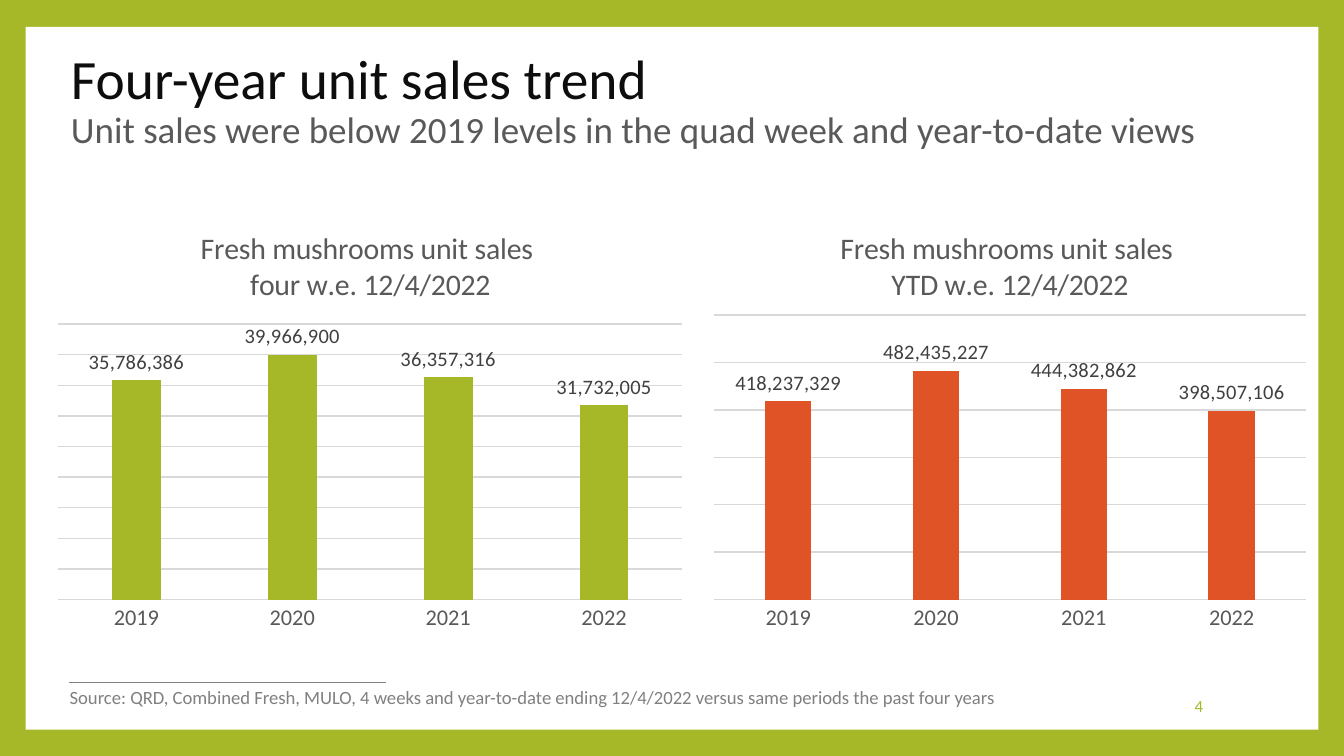
import lxml.etree
import pptx
import pptx.chart.data
import pptx.dml.color
import pptx.enum.chart
import pptx.enum.shapes
import pptx.enum.text
import pptx.oxml
import pptx.oxml.ns
import pptx.util

Inches = pptx.util.Inches
ALIGN = pptx.enum.text.PP_ALIGN
ANCHOR = pptx.enum.text.MSO_ANCHOR
COLORS = {
    "green": "A6B727", "orange": "DF5327", "panel": "FFFFFF", "ink": "0D0D0D",
    "muted": "595959", "label": "404040", "source": "808080", "grid": "D9D9D9",
}


class SlideBuilder:
    """Hold the style and the current slide, and add each kind of element."""

    def __init__(self, slide, colors, font_name):
        self.slide = slide
        self.colors = colors
        self.font_name = font_name

    def color(self, key):
        return pptx.dml.color.RGBColor.from_string(self.colors[key])

    def apply(self, target, formats):
        for attribute, value in formats.items():
            setattr(target, attribute, value)

    def style_font(self, font, size, color):
        self.apply(font, {"name": self.font_name, "size": pptx.util.Pt(size), "bold": False})
        font.color.rgb = self.color(color)

    def style_line(self, line, color, width):
        line.color.rgb = self.color(color)
        line.width = pptx.util.Pt(width)

    def background(self, color):
        fill = self.slide.background.fill
        fill.solid()
        fill.fore_color.rgb = self.color(color)

    def panel(self, box, color):
        panel = self.slide.shapes.add_shape(
            pptx.enum.shapes.MSO_SHAPE.RECTANGLE, *map(Inches, box))
        panel.shadow.inherit = False
        panel.fill.solid()
        panel.fill.fore_color.rgb = self.color(color)
        panel.line.fill.background()

    def rule(self, ends, color, width):
        rule = self.slide.shapes.add_connector(
            pptx.enum.shapes.MSO_CONNECTOR.STRAIGHT, *map(Inches, ends))
        self.style_line(rule.line, color, width)
        properties = rule._element.spPr
        lxml.etree.SubElement(properties, pptx.oxml.ns.qn("a:effectLst"))

    def text(self, box, lines, align=ALIGN.LEFT, spacing=1.0, wrap=True):
        frame = self.slide.shapes.add_textbox(*map(Inches, box)).text_frame
        self.apply(frame, {"word_wrap": wrap, "vertical_anchor": ANCHOR.MIDDLE})
        paragraph = frame.paragraphs[0]
        self.apply(paragraph, {"alignment": align, "line_spacing": spacing})
        for index, (words, size, color) in enumerate(lines):
            if index:
                paragraph.add_line_break()
            run = paragraph.add_run()
            run.text = words
            self.style_font(run.font, size, color)

    def column_chart(self, box, title, years, units, color, axis_top, axis_step, plot_top, plot_height):
        data = pptx.chart.data.CategoryChartData(number_format="#,##0")
        data.categories = years
        data.add_series("Series 1", units)
        chart = self.slide.shapes.add_chart(
            pptx.enum.chart.XL_CHART_TYPE.COLUMN_CLUSTERED, *map(Inches, box), data).chart
        chart.has_legend = False
        self.style_font(chart.font, 10, "muted")
        self.chart_title(chart, title)
        self.axes(chart, axis_top, axis_step)
        self.columns(chart.plots[0], color)
        self.plot_layout(chart, plot_top, plot_height)

    def chart_title(self, chart, title):
        frame = chart.chart_title.text_frame
        frame.text = title
        for paragraph in frame.paragraphs:
            self.style_font(paragraph.runs[0].font, 16, "muted")
        chart.chart_title.include_in_layout = False

    def axes(self, chart, axis_top, axis_step):
        no_mark = pptx.enum.chart.XL_TICK_MARK.NONE
        self.apply(chart.category_axis, {"major_tick_mark": no_mark, "minor_tick_mark": no_mark})
        self.style_font(chart.category_axis.tick_labels.font, 12, "muted")
        self.style_line(chart.category_axis.format.line, "grid", 0.75)
        self.apply(chart.value_axis, {
            "visible": False, "has_major_gridlines": True, "minimum_scale": 0,
            "maximum_scale": axis_top, "major_unit": axis_step})
        self.style_line(chart.value_axis.major_gridlines.format.line, "grid", 0.75)

    def columns(self, plot, color):
        self.apply(plot, {"gap_width": 219, "overlap": -27, "vary_by_categories": False})
        series = plot.series[0]
        self.apply(series.data_labels, {
            "show_value": True, "number_format": "#,##0", "number_format_is_linked": False,
            "position": pptx.enum.chart.XL_LABEL_POSITION.OUTSIDE_END})
        self.style_font(series.data_labels.font, 11, "label")
        series.format.fill.solid()
        series.format.fill.fore_color.rgb = self.color(color)

    def plot_layout(self, chart, top, height):
        plot_area = chart._chartSpace.chart.plotArea
        for layout in plot_area.findall(pptx.oxml.ns.qn("c:layout")):
            plot_area.remove(layout)
        settings = {"layoutTarget": "inner", "xMode": "edge", "yMode": "edge",
                    "x": 0, "y": top, "w": 1, "h": height}
        entries = "".join(f'<c:{tag} val="{value}"/>' for tag, value in settings.items())
        plot_area.insert(0, pptx.oxml.parse_xml(
            f'<c:layout {pptx.oxml.ns.nsdecls("c")}><c:manualLayout>{entries}'
            "</c:manualLayout></c:layout>"))


def main():
    presentation = pptx.Presentation()
    presentation.slide_width = Inches(10)
    presentation.slide_height = Inches(10 * 9 / 16)
    slide = presentation.slides.add_slide(presentation.slide_layouts[6])
    builder = SlideBuilder(slide, COLORS, "Calibri")

    builder.background("green")
    builder.panel((0.19, 0.2, 9.62, 5.23), "panel")
    builder.rule((0.51, 5.08, 2.87, 5.08), "source", 0.79)
    builder.text((0.43, 0.36, 9.06, 0.79), [
        ("Four-year unit sales trend", 29.7, "ink"),
        ("Unit sales were below 2019 levels in the quad week and year-to-date views", 19.8, "muted"),
    ], spacing=0.9)
    builder.text((7.65, 5.1, 1.4, 0.3), [("4", 9, "green")], align=ALIGN.RIGHT)
    builder.text((0.42, 5.05, 7.22, 0.27), [
        ("Source: QRD, Combined Fresh, MULO, 4 weeks and year-to-date ending 12/4/2022 "
         "versus same periods the past four years", 10, "source"),
    ], wrap=False)

    years = ["2019", "2020", "2021", "2022"]
    builder.column_chart(
        (0.43, 1.55, 4.65, 3.31), "Fresh mushrooms unit sales \nfour w.e. 12/4/2022", years,
        (35786386, 39966900, 36357316, 31732005), "green", 45_000_000, 5_000_000, 0.26, 0.62)
    builder.column_chart(
        (5.31, 1.55, 4.41, 3.31), "Fresh mushrooms unit sales \nYTD w.e. 12/4/2022", years,
        (418237329, 482435227, 444382862, 398507106), "orange", 600_000_000, 100_000_000, 0.24, 0.64)

    presentation.save("out.pptx")


if __name__ == "__main__":
    main()
